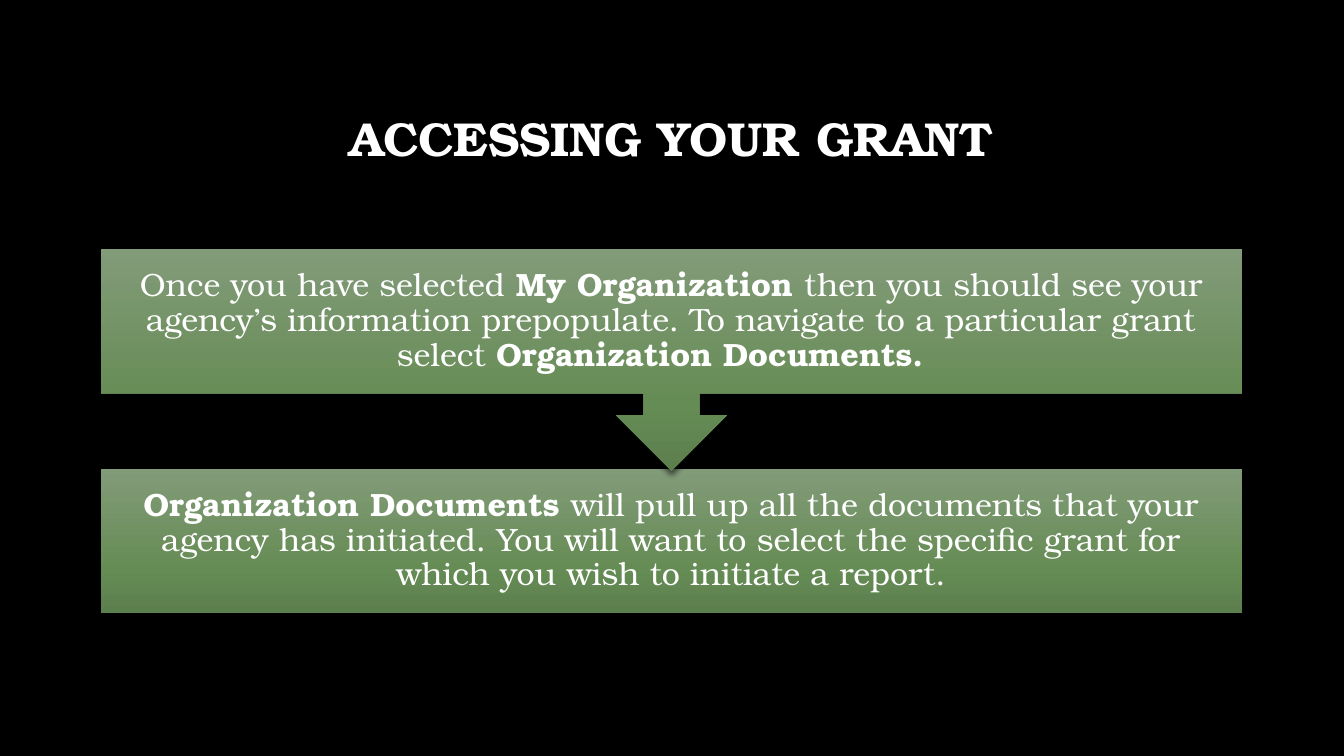
from lxml.etree import SubElement
from pptx import Presentation
from pptx.dml.color import RGBColor
from pptx.enum.shapes import MSO_SHAPE as Shape
from pptx.enum.text import MSO_ANCHOR as Anchor, PP_ALIGN as Align
from pptx.oxml.ns import qn
from pptx.util import Inches, Pt

FONT = "TeX Gyre Bonum"
BLACK = RGBColor(0x00, 0x00, 0x00)
WHITE = RGBColor(0xFF, 0xFF, 0xFF)
GREENS = (
    (0, RGBColor(0x82, 0x9B, 0x79)),
    (69, RGBColor(0x66, 0x8C, 0x55)),
    (100, RGBColor(0x5C, 0x7F, 0x4E)),
)
LEFT, WIDTH = 1, 11.32

SELECT = (
    ("Once you have selected ", False),
    ("My Organization ", True),
    ("then you should see your agency’s information prepopulate. "
     "To navigate to a particular grant select ", False),
    ("Organization Documents.  ", True),
)
REPORT = (
    ("Organization Documents", True),
    (" will pull up all the documents that your agency has initiated. "
     "You will want to select the specific grant for which you wish "
     "to initiate a report.", False),
)


def add_color(parent, color, alpha=None):
    node = SubElement(parent, qn("a:srgbClr"), val=str(color))
    if alpha is not None:
        SubElement(node, qn("a:alpha"), val=str(alpha * 1000))


def fill_green(shape):
    """Fill from light at the top to dark at the bottom."""
    shape.fill.gradient()
    shape.fill.gradient_angle = 270
    stops = shape.element.spPr.find(".//" + qn("a:gsLst"))
    for stop in list(stops):
        stops.remove(stop)
    for place, color in GREENS:
        add_color(SubElement(stops, qn("a:gs"), pos=str(place * 1000)), color)


def add_shadow(shape):
    shape.shadow.inherit = False
    effects = shape.element.spPr.find(qn("a:effectLst"))
    shadow = SubElement(effects, qn("a:outerShdw"), blurRad=str(Pt(4)),
                        dist=str(Pt(3)), dir="5400000", rotWithShape="0")
    add_color(shadow, BLACK, 54)


def write(frame, runs, size):
    frame.word_wrap = True
    frame.vertical_anchor = Anchor.MIDDLE
    para = frame.paragraphs[0]
    para.alignment = Align.CENTER
    para.line_spacing = 0.9
    para.font.name = FONT
    para.font.size = Pt(size)
    para.font.color.rgb = WHITE
    for text, bold in runs:
        run = para.add_run()
        run.text = text
        run.font.bold = bold


def add_title(slide, text):
    box = slide.shapes.add_textbox(Inches(LEFT), Inches(0.67),
                                   Inches(WIDTH), Inches(1.45))
    write(box.text_frame, [(text, True)], 34)


def add_step(slide, kind, top, height, runs):
    step = slide.shapes.add_shape(kind, Inches(LEFT), Inches(top),
                                  Inches(WIDTH), Inches(height))
    fill_green(step)
    step.line.fill.background()
    add_shadow(step)
    frame = step.text_frame
    frame.margin_left = frame.margin_right = Inches(0.18)
    frame.margin_top = frame.margin_bottom = Inches(0.18)
    write(frame, runs, 23)


def main():
    deck = Presentation()
    deck.slide_width, deck.slide_height = Inches(13.33), Inches(7.5)
    slide = deck.slides.add_slide(deck.slide_layouts[6])
    back = slide.background.fill
    back.solid()
    back.fore_color.rgb = BLACK
    add_title(slide, "ACCESSING YOUR GRANT")
    # The arrow tip lies over the lower box, so that box comes first.
    add_step(slide, Shape.RECTANGLE, 4.65, 1.43, REPORT)
    add_step(slide, Shape.DOWN_ARROW_CALLOUT, 2.47, 2.2, SELECT)
    deck.save("out.pptx")


if __name__ == "__main__":
    main()
